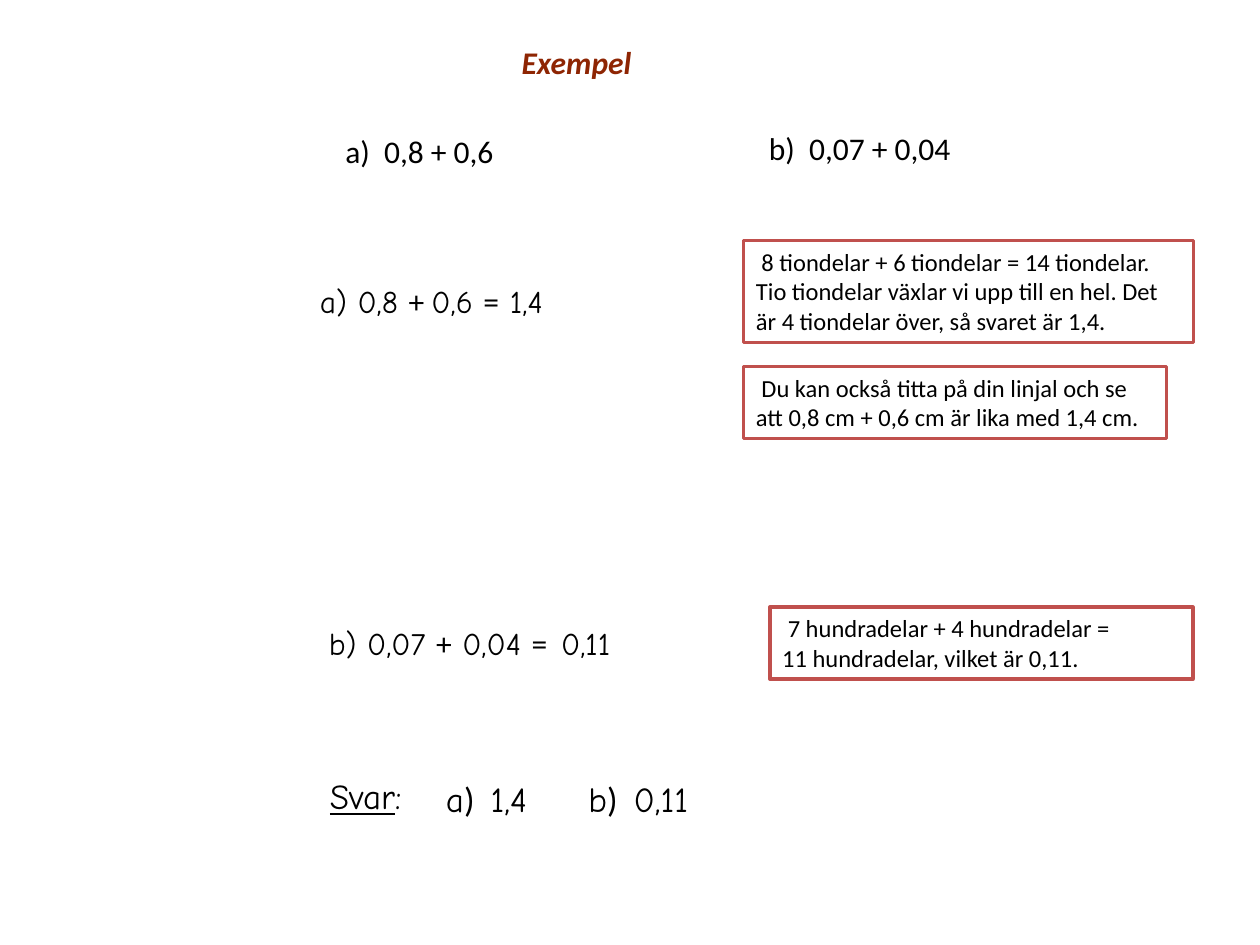
import pptx
import pptx.util
import pptx.dml.color
import pptx.enum.shapes
import pptx.enum.text

Cm = pptx.util.Cm
Pt = pptx.util.Pt
HUES = {"title": "8E2503", "ink": "000000", "edge": "C0504D", "paper": "FFFFFF"}
SANS, HAND = "Calibri", "Comic Neue"
FIT = pptx.enum.text.MSO_AUTO_SIZE.SHAPE_TO_FIT_TEXT
TOP = pptx.enum.text.MSO_ANCHOR.TOP
LEFT = pptx.enum.text.PP_ALIGN.LEFT


def hue(name):
    return pptx.dml.color.RGBColor.from_string(HUES[name])


def assign(item, values):
    for name, value in values.items():
        setattr(item, name, value)


def write(frame, lines, size, color="ink", wrap=True, **style):
    assign(frame, {"word_wrap": wrap, "auto_size": FIT, "vertical_anchor": TOP})
    for index, runs in enumerate(lines):
        para = frame.paragraphs[0] if index == 0 else frame.add_paragraph()
        para.alignment = LEFT
        for text, face, *extra in runs:
            run = para.add_run()
            run.text = text
            form = {"name": face, "size": Pt(size), **style}
            for more in extra:
                form.update(more)
            assign(run.font, form)
            run.font.color.rgb = hue(color)


def label(slide, box, runs, size=18, wrap=True):
    shape = slide.shapes.add_textbox(*map(Cm, box))
    write(shape.text_frame, [runs], size, wrap=wrap)


def head(slide, box):
    title = slide.shapes.title
    places = zip(("left", "top", "width", "height"), map(Cm, box))
    assign(title, dict(places))
    write(title.text_frame, [[("Exempel", SANS)]], 18, "title", False,
          bold=True, italic=True)


def task(slide, box, text):
    table = slide.shapes.add_table(1, 1, *map(Cm, box)).table
    assign(table, {"first_row": False, "horz_banding": False})
    cell = table.cell(0, 0)
    cell.fill.background()
    assign(cell, {"margin_left": Cm(0.13), "margin_right": Cm(0.13),
                  "margin_top": 0, "margin_bottom": 0})
    para = cell.text_frame.paragraphs[0]
    run = para.add_run()
    run.text = text
    assign(run.font, {"name": SANS, "size": Pt(18), "bold": False})
    run.font.color.rgb = hue("ink")


def solve(slide, box, runs, result, shift, room):
    left, top, width, height = box
    label(slide, box, runs)
    label(slide, (left + shift, top, room, height), [(result, HAND)], wrap=False)


def note(slide, box, lines):
    kind = pptx.enum.shapes.MSO_SHAPE.RECTANGLE
    shape = slide.shapes.add_shape(kind, *map(Cm, box))
    shape.shadow.inherit = False
    shape.fill.solid()
    shape.fill.fore_color.rgb = hue("paper")
    shape.line.color.rgb = hue("edge")
    shape.line.width = Pt(2)
    write(shape.text_frame, [[(line, SANS)] for line in lines], 14)


def answer(slide, box):
    left, top, width, height = box
    label(slide, (left, top, 2.64, height),
          [("Svar", HAND, {"underline": True}), (":", HAND)], 20)
    for shift, mark, value in ((2.34, "a", "1,4"), (5.21, "b", "0,11")):
        label(slide, (left + shift, top + 0.05, 3.94, height),
              [(mark, HAND), (")  ", SANS), (value, HAND)], 20)


def main():
    deck = pptx.Presentation()
    assign(deck, {"slide_width": Cm(25.4), "slide_height": Cm(19.05)})
    slide = deck.slides.add_slide(deck.slide_layouts[5])

    head(slide, (10.26, 0.74, 2.74, 1.02))
    task(slide, (6.83, 2.69, 4.5, 0.76), "a)  0,8 + 0,6\u00a0".rstrip())
    task(slide, (15.37, 2.64, 4.5, 0.76), "b)  0,07 + 0,04")

    solve(slide, (6.2, 5.56, 4.6, 1.02),
          [("a) 0,8 ", HAND), ("+ ", SANS), ("0,6 ", HAND), ("=", SANS)],
          "1,4", 3.83, 1.42)
    solve(slide, (6.38, 12.45, 5.31, 1.02),
          [("b) 0,07 ", HAND), ("+", SANS), (" 0,04 ", HAND), ("=", SANS)],
          " 0,11", 4.47, 1.88)

    note(slide, (14.99, 4.85, 9.07, 2.06),
         [" 8 tiondelar + 6 tiondelar = 14 tiondelar.",
          "Tio tiondelar växlar vi upp till en hel. "
          "Det är 4 tiondelar över, så svaret är 1,4."])
    note(slide, (14.99, 7.39, 8.53, 1.45),
         [" Du kan också titta på din linjal och se "
          "att 0,8 cm + 0,6 cm är lika med 1,4 cm."])
    note(slide, (15.52, 12.24, 8.53, 1.45),
         [" 7 hundradelar + 4 hundradelar =",
          "11 hundradelar, vilket är 0,11."])

    answer(slide, (6.4, 15.49, 9.15, 1.17))
    deck.save("out.pptx")


if __name__ == "__main__":
    main()
